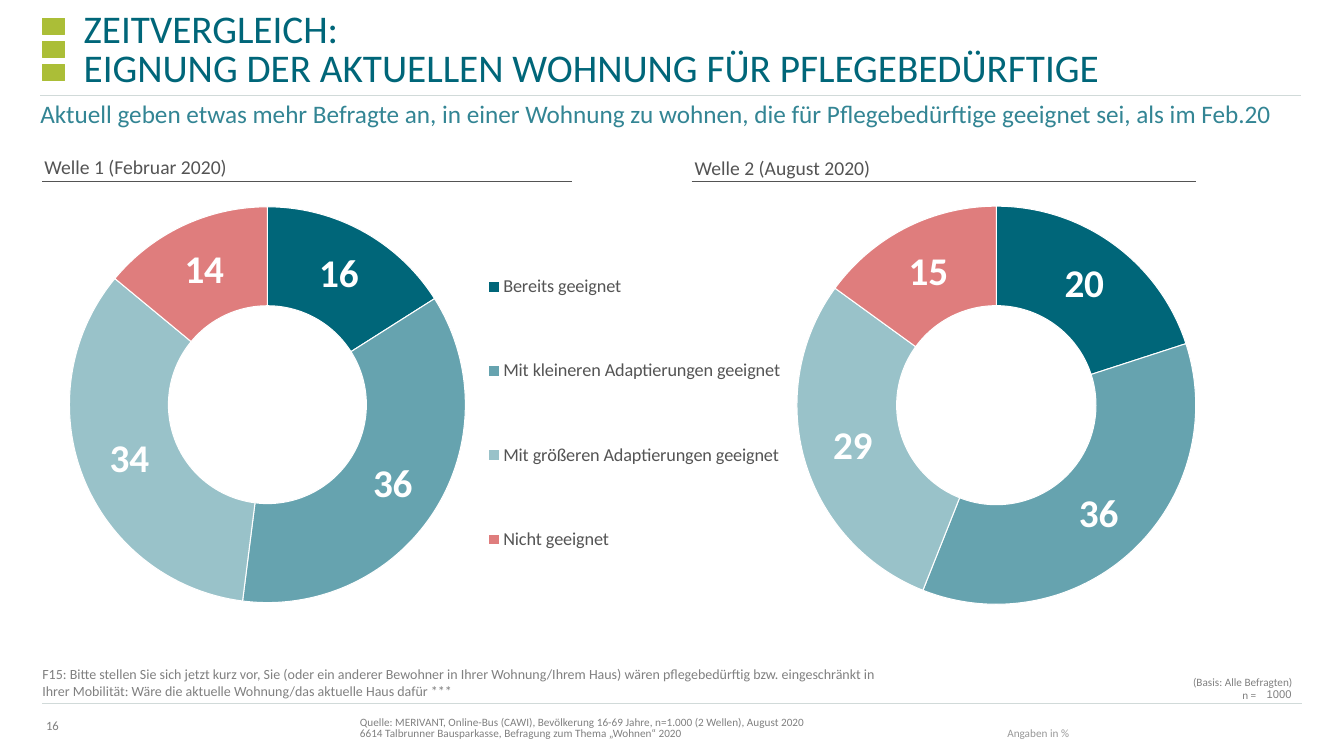
"""Builds a slide comparing two survey waves with doughnut charts."""
from lxml import etree
from pptx import Presentation
from pptx.chart.data import CategoryChartData
from pptx.dml.color import RGBColor
from pptx.enum.chart import XL_CHART_TYPE, XL_LEGEND_POSITION
from pptx.enum.shapes import MSO_CONNECTOR, MSO_SHAPE
from pptx.enum.text import MSO_ANCHOR, MSO_AUTO_SIZE, PP_ALIGN
from pptx.oxml import parse_xml
from pptx.oxml.ns import nsdecls, qn
from pptx.util import Inches, Pt

DOUGHNUT = XL_CHART_TYPE.DOUGHNUT
LEGEND_RIGHT = XL_LEGEND_POSITION.RIGHT
STRAIGHT = MSO_CONNECTOR.STRAIGHT
RECTANGLE = MSO_SHAPE.RECTANGLE
TOP, MIDDLE, BOTTOM = MSO_ANCHOR.TOP, MSO_ANCHOR.MIDDLE, MSO_ANCHOR.BOTTOM
LEFT, CENTER, RIGHT = PP_ALIGN.LEFT, PP_ALIGN.CENTER, PP_ALIGN.RIGHT
NO_AUTO_SIZE = MSO_AUTO_SIZE.NONE

PETROL = RGBColor(0x00, 0x66, 0x79)
PETROL_SOFT = RGBColor(0x33, 0x85, 0x94)
TEAL = RGBColor(0x66, 0xA3, 0xAF)
TEAL_LIGHT = RGBColor(0x99, 0xC2, 0xC9)
CORAL = RGBColor(0xDF, 0x7D, 0x7D)
LIME = RGBColor(0xAB, 0xBE, 0x37)
RULE_GRAY = RGBColor(0xD1, 0xDA, 0xD9)
DARK_GRAY = RGBColor(0x54, 0x54, 0x54)
GRAY = RGBColor(0x80, 0x80, 0x80)
LIGHT_GRAY = RGBColor(0x98, 0x98, 0x98)
WHITE = RGBColor(0xFF, 0xFF, 0xFF)
FONT = "Calibri"
PLAIN_TABLE_STYLE = "{2D5ABB26-0587-4C30-8999-92F81FD0307C}"


def write_text(frame, lines, size, color, align=LEFT, spacing=1.0, font=FONT):
    paragraph = frame.paragraphs[0]
    properties = paragraph._p.get_or_add_pPr()
    properties.set("marL", "0")
    properties.set("indent", "0")
    etree.SubElement(properties, qn("a:buNone"))
    for index, line in enumerate(lines):
        if index:
            paragraph.add_line_break()
        paragraph.add_run().text = line
    paragraph.alignment = align
    paragraph.line_spacing = spacing
    paragraph.space_before = Pt(0)
    for run in paragraph.runs:
        formats = {"name": font, "size": Pt(size), "bold": False}
        for name, value in formats.items():
            setattr(run.font, name, value)
        run.font.color.rgb = color


def make_layout(left, top, width, height, target=""):
    numbers = {"x": left, "y": top, "w": width, "h": height}
    modes = "".join(f'<c:{axis}Mode val="edge"/>' for axis in "xy")
    values = "".join(f'<c:{key} val="{value}"/>' for key, value in numbers.items())
    return parse_xml(f'<c:layout {nsdecls("c")}><c:manualLayout>{target}{modes}{values}'
                     "</c:manualLayout></c:layout>")


presentation = Presentation()
presentation.slide_width = Inches(13.33)
presentation.slide_height = Inches(7.5)
slide = presentation.slides.add_slide(presentation.slide_layouts[4])
placeholders = {shape.placeholder_format.idx: shape for shape in slide.placeholders}
unused = placeholders[4]._element
unused.getparent().remove(unused)

rules = [
    (0.42, 12.91, 6.98, RULE_GRAY),
    (0.4, 12.9, 0.95, RULE_GRAY),
    (0.42, 5.67, 1.8, DARK_GRAY),
    (6.86, 11.86, 1.8, DARK_GRAY),
]
for start, end, height, color in rules:
    rule = slide.shapes.add_connector(
        STRAIGHT, Inches(start), Inches(height), Inches(end), Inches(height))
    rule.line.color.rgb = color
    rule.line.width = Pt(0.75)
    etree.SubElement(rule._element.spPr, qn("a:effectLst"))

for row in range(3):
    square = slide.shapes.add_shape(
        RECTANGLE, Inches(0.42), Inches(0.18 + 0.23 * row), Inches(0.22), Inches(0.16))
    square.shadow.inherit = False
    square.fill.solid()
    square.fill.fore_color.rgb = LIME
    square.line.color.rgb = LIME
    square.line.width = Pt(0.5)

FOOTER_INSETS = (0.22, 0.05, 0.1, 0.05)
FLUSH_INSETS = (0, 0.05, 0, 0.05)
texts = [
    (0, (0.73, 0.37, 12.18, 0.53), (0.1, 0, 0.1, 0), BOTTOM,
     ["ZEITVERGLEICH:", "EIGNUNG DER AKTUELLEN WOHNUNG FÜR PFLEGEBEDÜRFTIGE"],
     dict(size=28, color=PETROL, spacing=Pt(28))),
    (1, (0.4, 0.98, 12.93, 0.39), (0, 0, 0.1, 0.05), TOP,
     ["Aktuell geben etwas mehr Befragte an, in einer Wohnung zu wohnen, "
      "die für Pflegebedürftige geeignet sei, als im Feb.20"],
     dict(size=18, color=PETROL_SOFT)),
    (2, (0.42, 6.59, 8.4, 0.36), FLUSH_INSETS, MIDDLE,
     ["F15: Bitte stellen Sie sich jetzt kurz vor, Sie (oder ein anderer Bewohner in Ihrer "
      "Wohnung/Ihrem Haus) wären pflegebedürftig bzw. eingeschränkt in Ihrer Mobilität: "
      "Wäre die aktuelle Wohnung/das aktuelle Haus dafür ***"],
     dict(size=10, color=GRAY)),
    (3, (8.83, 6.59, 3.99, 0.36), FLUSH_INSETS, MIDDLE,
     ["(Basis: Alle Befragten)"], dict(size=8, color=GRAY, align=RIGHT)),
    (None, (0.44, 1.49, 5.23, 0.34), FLUSH_INSETS, TOP,
     ["Welle 1 (Februar 2020)"], dict(size=14, color=DARK_GRAY)),
    (None, (6.89, 1.56, 6.27, 0.28), FLUSH_INSETS, TOP,
     ["Welle 2 (August 2020)"], dict(size=14, color=DARK_GRAY, spacing=0.7)),
    (None, (3.35, 7.06, 8.77, 0.33), FOOTER_INSETS, BOTTOM,
     ["Quelle: MERIVANT, Online-Bus (CAWI), Bevölkerung 16-69 Jahre, "
      "n=1.000 (2 Wellen), August 2020",
      "6614 Talbrunner Bausparkasse, Befragung zum Thema „Wohnen“ 2020"],
     dict(size=8, color=GRAY, spacing=0.85)),
    (None, (9.77, 7.17, 1.01, 0.22), FOOTER_INSETS, BOTTOM,
     ["Angaben in %"], dict(size=8, color=LIGHT_GRAY, spacing=0.85)),
    (None, (0.4, 7.12, 0.24, 0.15), (0, 0, 0, 0), MIDDLE,
     ["16"], dict(size=9, color=GRAY, align=CENTER)),
    (None, (11.34, 6.78, 1.12, 0.24), FLUSH_INSETS, TOP,
     ["n ="], dict(size=8, color=GRAY, align=RIGHT)),
]
for index, box, insets, anchor, lines, style in texts:
    position = [Inches(length) for length in box]
    if index is None:
        shape = slide.shapes.add_textbox(*position)
    else:
        shape = placeholders[index]
        shape.left, shape.top, shape.width, shape.height = position
    frame = shape.text_frame
    frame.word_wrap = True
    frame.auto_size = NO_AUTO_SIZE
    frame.vertical_anchor = anchor
    for side, inset in zip(("left", "top", "right", "bottom"), insets):
        setattr(frame, f"margin_{side}", Inches(inset))
    write_text(frame, lines, **style)

base_table = slide.shapes.add_table(
    1, 1, Inches(11.65), Inches(6.78), Inches(1.29), Inches(0.23)).table
base_table.first_row = False
base_table.horz_banding = False
base_table._tbl.tblPr.find(qn("a:tableStyleId")).text = PLAIN_TABLE_STYLE
base_cell = base_table.cell(0, 0)
base_cell.fill.background()
base_cell.margin_left = base_cell.margin_right = Inches(0.13)
write_text(base_cell.text_frame, ["1000"], 8, GRAY, align=RIGHT, font="Arial")

answers = ["Bereits geeignet", "Mit kleineren Adaptierungen geeignet",
           "Mit größeren Adaptierungen geeignet", "Nicht geeignet"]
waves = [
    ((0.12, 2.04, 8.57, 4.04), (0.066, 0.003, 0.459, 0.972), answers, (16, 36, 34, 14), True),
    ((6.72, 2.04, 6.04, 4.04), (0.072, 0, 0.903, 0.979), "1234", (20, 36, 29, 15), False),
]
for box, plot_area, categories, values, has_legend in waves:
    chart_data = CategoryChartData()
    chart_data.categories = categories
    chart_data.add_series("Series 1", values)
    position = [Inches(length) for length in box]
    chart = slide.shapes.add_chart(DOUGHNUT, *position, chart_data).chart
    chart.has_title = False
    chart.font.name = FONT
    chart.font.size = Pt(10)
    chart.font.color.rgb = DARK_GRAY

    plot_element = chart._chartSpace.chart.plotArea
    for old_layout in plot_element.findall(qn("c:layout")):
        plot_element.remove(old_layout)
    plot_element.insert(0, make_layout(*plot_area, '<c:layoutTarget val="inner"/>'))
    plot_element.find(".//" + qn("c:holeSize")).set("val", "55")

    plot = chart.plots[0]
    plot.vary_by_categories = True
    for index, color in enumerate((PETROL, TEAL, TEAL_LIGHT, CORAL)):
        point_format = plot.series[0].points[index].format
        point_format.fill.solid()
        point_format.fill.fore_color.rgb = color
        point_format.line.color.rgb = WHITE
        point_format.line.width = Pt(0.75)
    labels = plot.series[0].data_labels
    labels.show_value = True
    labels.show_percentage = False
    label_formats = {"name": FONT, "size": Pt(28), "bold": True}
    for name, value in label_formats.items():
        setattr(labels.font, name, value)
    labels.font.color.rgb = WHITE

    chart.has_legend = has_legend
    if has_legend:
        legend = chart.legend
        legend.position = LEGEND_RIGHT
        legend.include_in_layout = False
        legend.font.name = FONT
        legend.font.size = Pt(13)
        legend.font.color.rgb = DARK_GRAY
        for old_layout in legend._element.findall(qn("c:layout")):
            legend._element.remove(old_layout)
        legend_position = legend._element.find(qn("c:legendPos"))
        legend_position.addnext(make_layout(0.54, 0.02, 0.36, 0.98))

presentation.save("out.pptx")
